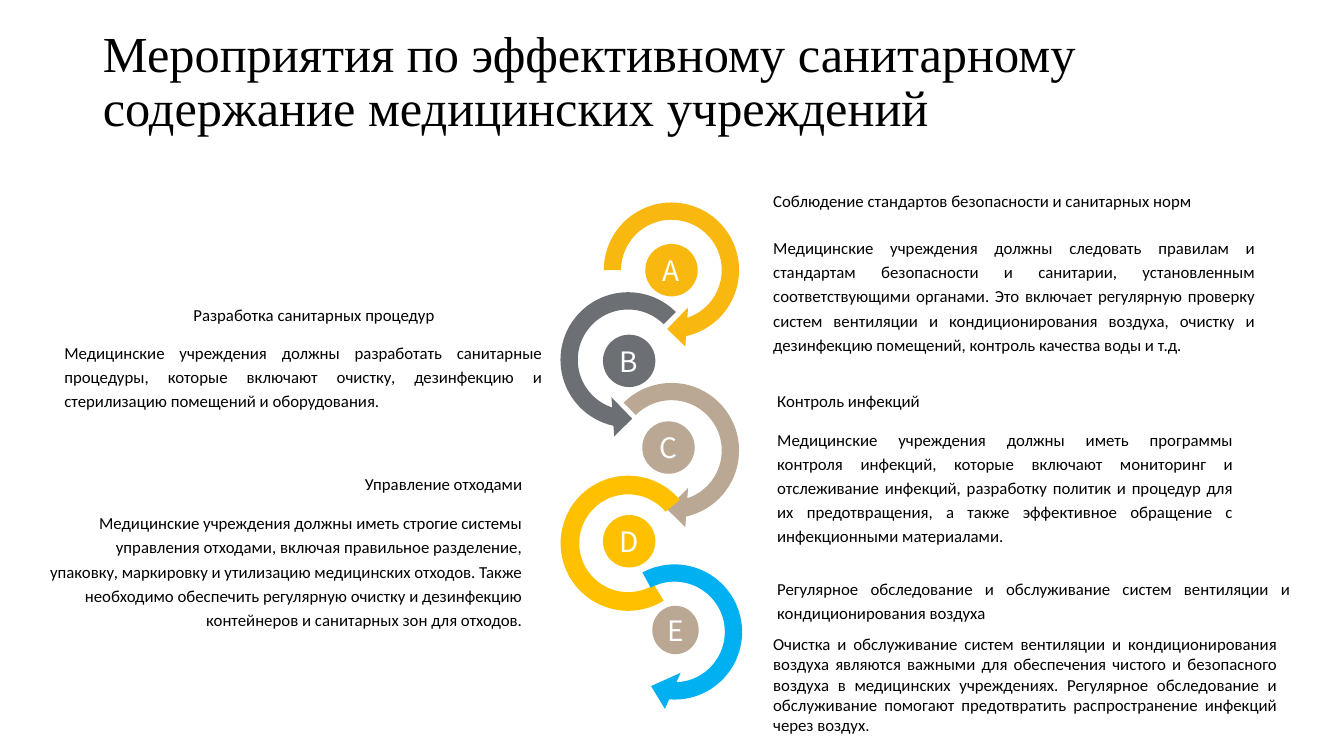
from pptx import Presentation
from pptx.dml.color import RGBColor
from pptx.enum.shapes import MSO_SHAPE as SHAPE
from pptx.enum.text import MSO_ANCHOR as ANCHOR, MSO_AUTO_SIZE as AUTO, PP_ALIGN as ALIGN
from pptx.util import Inches, Pt


def paint(color_format, value):
    color_format.rgb = RGBColor.from_string(value)


def write(tf, text, font, size, color, align, spacing):
    p = tf.paragraphs[0]
    p.alignment = align
    p.line_spacing = spacing
    r = p.add_run()
    r.text = text
    r.font.name = font
    r.font.size = Pt(size)
    paint(r.font.color, color)


prs = Presentation()
prs.slide_width, prs.slide_height = Inches(13.33), Inches(7.5)
s = prs.slides.add_slide(prs.slide_layouts[5])

title = s.shapes.title
title.left, title.top = Inches(0.92), Inches(0.4)
title.width, title.height = Inches(11.5), Inches(0.85)
title.text_frame.vertical_anchor = ANCHOR.MIDDLE
title.text_frame.word_wrap = True
title.text_frame.auto_size = AUTO.NONE
write(title.text_frame, "Мероприятия по эффективному санитарному содержание медицинских учреждений",
      "Times New Roman", 36, "000000", ALIGN.LEFT, 0.9)

ARROW, LEFT_ARROW, ARC = SHAPE.CIRCULAR_ARROW, SHAPE.LEFT_CIRCULAR_ARROW, SHAPE.BLOCK_ARC
steps = [
    ("C", ARROW, (5.88, 3.69, 1.56), 0, (0.11, 11.42, 45, 135, 0.125), "BBA894",
     (6.37, 4.18, 0.52, 0.52), "BBA894"),
    ("D", ARC, (5.56, 4.72, 1.34), 58.2, (0, 157.02, 0.138), "FFC000",
     (5.98, 5.11, 0.52, 0.52), "FFC000"),
    ("B", LEFT_ARROW, (5.45, 2.79, 1.56), 0, (0.11, 11.42, 63, 189, 0.125), "6C7074",
     (5.98, 3.32, 0.52, 0.52), "6C7074"),
    ("A", ARROW, (5.88, 1.9, 1.56), 0, (0.11, 11.42, 45, 108, 0.125), "F9B810",
     (6.4, 2.42, 0.52, 0.52), "F9B810"),
    ("Е", ARROW, (5.91, 5.49, 1.56), 16.7, (0.11, 13.02, 45, 135, 0.125), "00B0F0",
     (6.47, 6.01, 0.46, 0.48), "BBA894"),
]
for letter, kind, (x, y, side), turn, adjustments, ring_color, disc_box, disc_color in steps:
    ring = s.shapes.add_shape(kind, Inches(x), Inches(y), Inches(side), Inches(side))
    ring.rotation = turn
    for i, value in enumerate(adjustments):
        ring.adjustments[i] = value
    disc = s.shapes.add_shape(SHAPE.OVAL, *map(Inches, disc_box))
    for sp, color in ((ring, ring_color), (disc, disc_color)):
        sp.shadow.inherit = False
        sp.fill.solid()
        paint(sp.fill.fore_color, color)
        sp.line.fill.background()
    tf = disc.text_frame
    tf.margin_left = tf.margin_right = tf.margin_top = tf.margin_bottom = 0
    tf.vertical_anchor = ANCHOR.MIDDLE
    write(tf, letter, "Noto Sans CJK SC", 20, "FFFFFF", ALIGN.CENTER, 1.0)

texts = [
    ((7.57, 1.8, 4.98, 0.34), ALIGN.JUSTIFY, 1.2,
     "Соблюдение стандартов безопасности и санитарных норм"),
    ((7.57, 2.27, 4.98, 1.23), ALIGN.JUSTIFY, 1.2,
     "Медицинские учреждения должны следовать правилам и стандартам безопасности и санитарии, "
     "установленным соответствующими органами. Это включает регулярную проверку систем вентиляции "
     "и кондиционирования воздуха, очистку и дезинфекцию помещений, контроль качества воды и т.д."),
    ((7.61, 3.79, 3.9, 0.33), ALIGN.JUSTIFY, 1.2, "Контроль инфекций"),
    ((7.61, 4.17, 4.72, 1.31), ALIGN.JUSTIFY, 1.2,
     "Медицинские учреждения должны иметь программы контроля инфекций, которые включают мониторинг "
     "и отслеживание инфекций, разработку политик и процедур для их предотвращения, а также "
     "эффективное обращение с инфекционными материалами."),
    ((1.82, 2.93, 3.66, 0.34), ALIGN.JUSTIFY, 1.2, "Разработка санитарных процедур"),
    ((0.54, 3.31, 4.94, 0.83), ALIGN.JUSTIFY, 1.2,
     "Медицинские учреждения должны разработать санитарные процедуры, которые включают очистку, "
     "дезинфекцию и стерилизацию помещений и оборудования."),
    ((1.48, 4.61, 3.8, 0.33), ALIGN.RIGHT, 1.2, "Управление отходами"),
    ((0.34, 5, 4.94, 1.3), ALIGN.RIGHT, 1.2,
     "Медицинские учреждения должны иметь строгие системы управления отходами, включая правильное "
     "разделение, упаковку, маркировку и утилизацию медицинских отходов. Также необходимо обеспечить "
     "регулярную очистку и дезинфекцию контейнеров и санитарных зон для отходов."),
    ((7.61, 5.65, 5.29, 0.59), ALIGN.JUSTIFY, 1.2,
     "Регулярное обследование и обслуживание систем вентиляции и кондиционирования воздуха"),
    ((7.57, 6.24, 5.2, 1.11), ALIGN.JUSTIFY, 1.0,
     "Очистка и обслуживание систем вентиляции и кондиционирования воздуха являются важными для "
     "обеспечения чистого и безопасного воздуха в медицинских учреждениях. Регулярное обследование "
     "и обслуживание помогают предотвратить распространение инфекций через воздух."),
]
for box, align, spacing, text in texts:
    tf = s.shapes.add_textbox(*map(Inches, box)).text_frame
    tf.word_wrap = True
    tf.auto_size = AUTO.SHAPE_TO_FIT_TEXT
    write(tf, text, "Calibri", 12, "000000", align, spacing)

prs.save("out.pptx")
